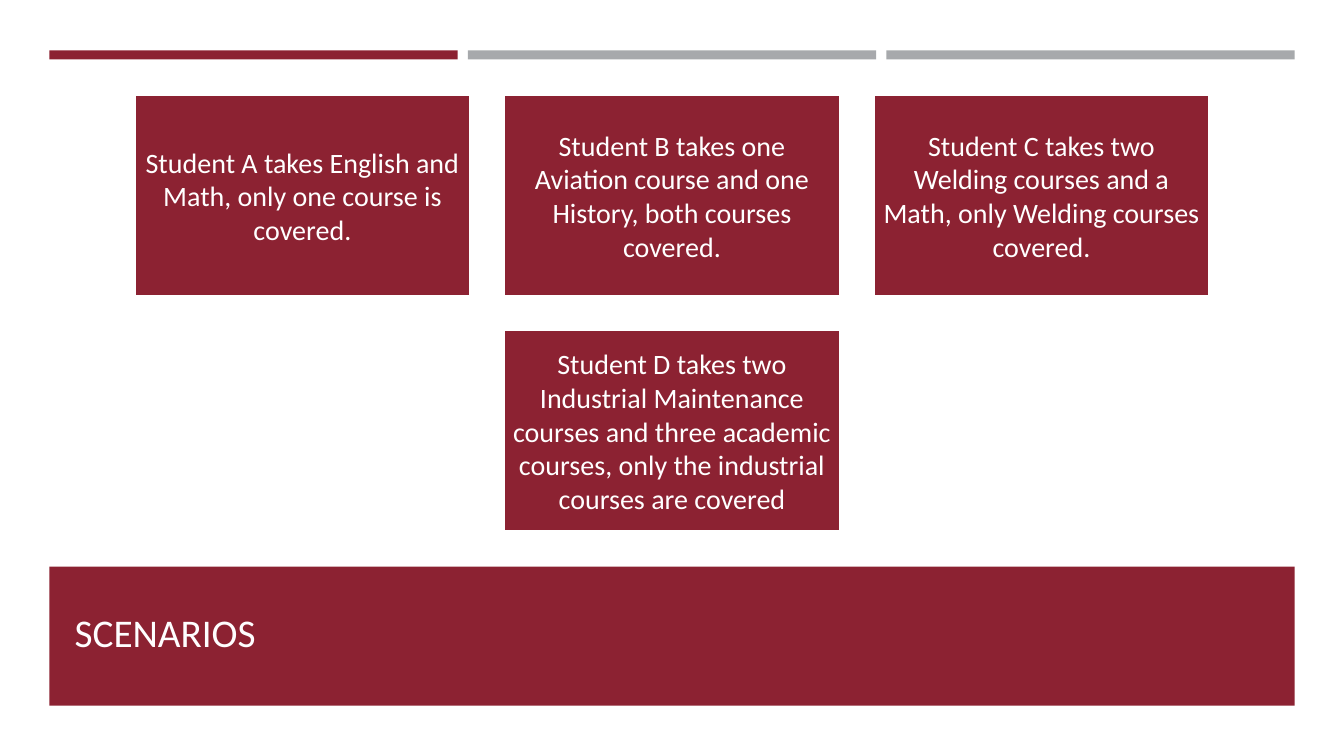
from pptx import Presentation
from pptx.dml.color import RGBColor
from pptx.enum.shapes import MSO_SHAPE
from pptx.enum.text import MSO_ANCHOR, MSO_AUTO_SIZE, PP_ALIGN
from pptx.util import Inches, Pt

COLORS = {"crimson": "8C2232", "gray": "A7A9AC", "white": "FFFFFF", "title": "FFFEFF"}
FONT = "Calibri"
SLIDE_WIDTH = 13.33
CARD_WIDTH, CARD_HEIGHT, CARD_GAP = 3.33, 2, 0.335
CARDS_TOP = 0.94

SCENARIO_ROWS = [
    [
        "Student A takes English and Math, only one course is covered.",
        "Student B takes one Aviation course and one History, both courses covered.",
        "Student C takes two Welding courses and a Math, only Welding courses covered.",
    ],
    [
        "Student D takes two Industrial Maintenance courses and three academic "
        "courses, only the industrial courses are covered",
    ],
]


def color(name):
    return RGBColor.from_string(COLORS[name])


def add_block(slide, left, top, width, height, fill):
    block = slide.shapes.add_shape(
        MSO_SHAPE.RECTANGLE, Inches(left), Inches(top), Inches(width), Inches(height)
    )
    block.shadow.inherit = False
    block.fill.solid()
    block.fill.fore_color.rgb = color(fill)
    block.line.fill.background()
    return block


def write(frame, text, size, ink, align):
    paragraph = frame.paragraphs[0]
    paragraph.alignment = align
    run = paragraph.add_run()
    run.text = text
    run.font.name = FONT
    run.font.size = Pt(size)
    run.font.color.rgb = color(ink)


def add_top_bars(slide):
    for column, fill in enumerate(["crimson", "gray", "gray"]):
        add_block(slide, 0.49 + column * 4.15, 0.5, 4.05, 0.09, fill)


def add_card(slide, left, top, scenario):
    card = add_block(slide, left, top, CARD_WIDTH, CARD_HEIGHT, "crimson")
    card.line.color.rgb = color("white")
    card.line.width = Pt(1.75)
    frame = card.text_frame
    frame.word_wrap = True
    frame.vertical_anchor = MSO_ANCHOR.MIDDLE
    frame.margin_left = frame.margin_right = Inches(0.08)
    frame.margin_top = frame.margin_bottom = Inches(0.08)
    write(frame, scenario, 20, "white", PP_ALIGN.CENTER)


def add_scenarios(slide):
    for row, scenarios in enumerate(SCENARIO_ROWS):
        count = len(scenarios)
        row_width = count * CARD_WIDTH + (count - 1) * CARD_GAP
        row_left = (SLIDE_WIDTH - row_width) / 2
        top = CARDS_TOP + row * (CARD_HEIGHT + CARD_GAP)
        for column, scenario in enumerate(scenarios):
            add_card(slide, row_left + column * (CARD_WIDTH + CARD_GAP), top, scenario)


def add_title_banner(slide):
    banner = add_block(slide, 0.49, 5.62, 12.35, 1.38, "crimson")
    title = slide.shapes.title
    banner.element.addnext(title.element)
    title.left, title.top = Inches(0.64), Inches(5.76)
    title.width, title.height = Inches(12.06), Inches(0.79)
    frame = title.text_frame
    frame.word_wrap = True
    frame.auto_size = MSO_AUTO_SIZE.NONE
    frame.vertical_anchor = MSO_ANCHOR.BOTTOM
    write(frame, "SCENARIOS", 28, "title", PP_ALIGN.LEFT)


def main():
    deck = Presentation()
    deck.slide_width, deck.slide_height = Inches(SLIDE_WIDTH), Inches(7.5)
    slide = deck.slides.add_slide(deck.slide_layouts[5])
    add_top_bars(slide)
    add_title_banner(slide)
    add_scenarios(slide)
    deck.save("out.pptx")


if __name__ == "__main__":
    main()
